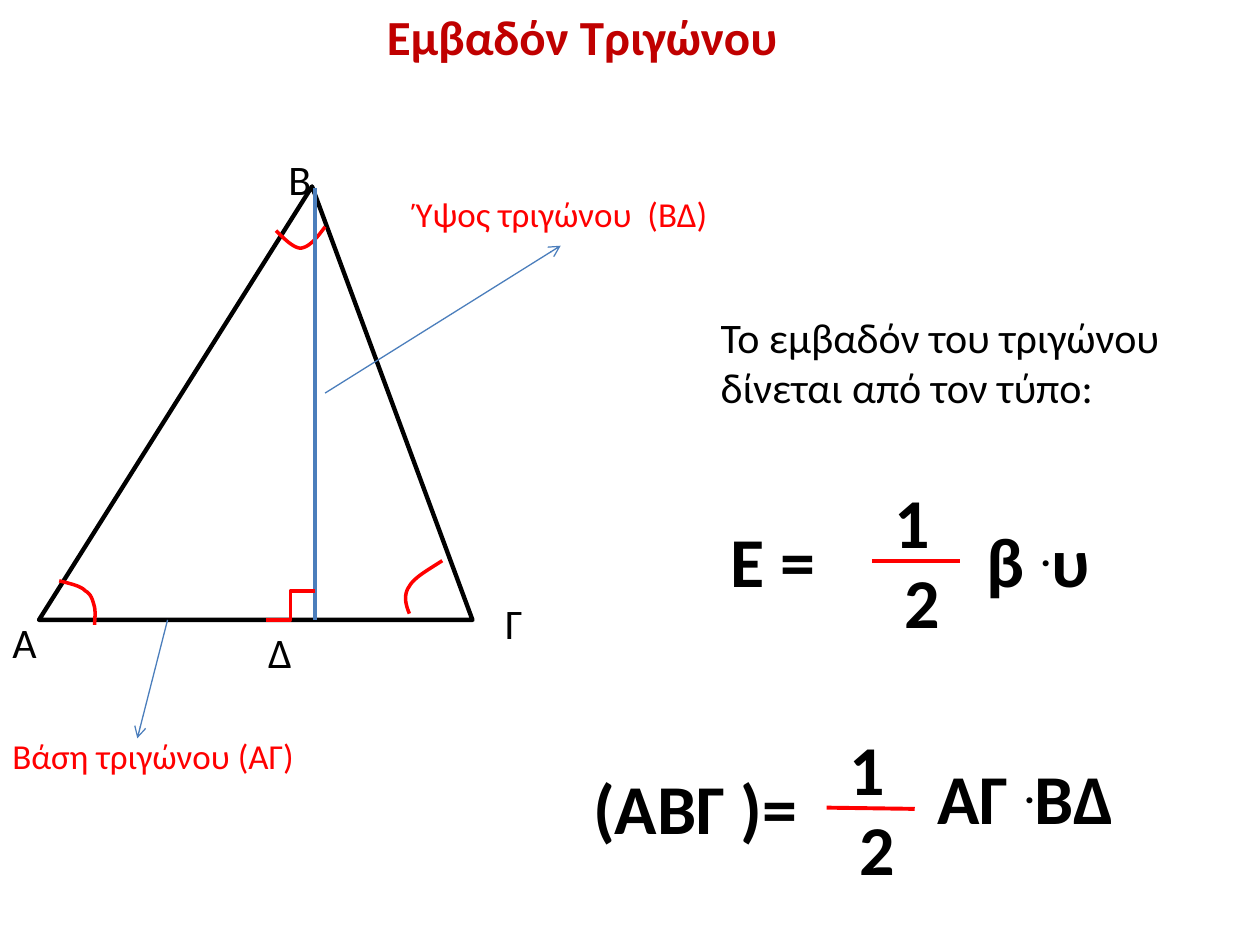
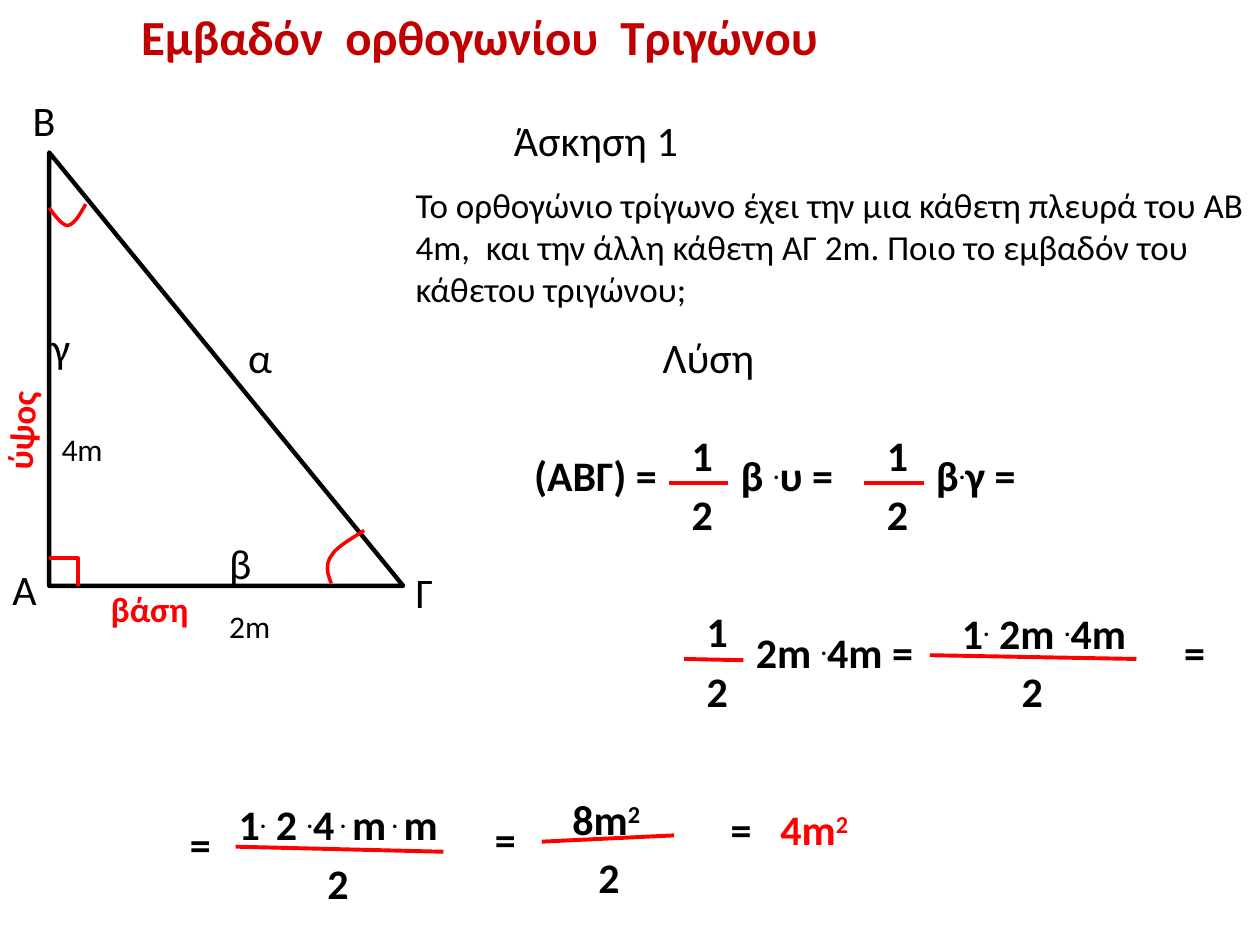
from dataclasses import dataclass
from typing import Any

import lxml.etree
import pptx
import pptx.dml.color
import pptx.enum.shapes
import pptx.enum.text
import pptx.oxml.ns
import pptx.slide
import pptx.util

Inches = pptx.util.Inches
Shapes = pptx.enum.shapes
Point = tuple[float, float]


@dataclass(frozen=True)
class Theme:
    font: str = "Calibri"
    black: str = "000000"
    red: str = "FF0000"
    dark: str = "C00000"
    blue: str = "4B7EBC"
    title: float = 28
    huge: float = 40
    body: float = 24
    note: float = 20
    small: float = 18
    edge: float = 2.5
    bar: float = 2.25
    mark: float = 2
    thin: float = 0.75


THEME = Theme()


@dataclass(frozen=True)
class Label:
    words: str
    left: float
    top: float
    wide: float = 0.55
    size: float = THEME.body
    color: str = THEME.black
    bold: bool = False
    wrap: bool = True
    lines: int = 1
    turn: float = 0


@dataclass(frozen=True)
class Line:
    start: Point
    end: Point
    color: str = THEME.blue
    width: float = THEME.mark
    arrow: bool = False
    bend: float | None = None


@dataclass(frozen=True)
class Arc:
    left: float
    top: float
    wide: float
    high: float
    curve: tuple[Point, ...]


@dataclass(frozen=True)
class Ratio:
    left: float
    top: float
    wide: float = 0.47
    slope: float = 0
    over: str = "1"
    room: float = 0.55
    over_at: Point = (0.08, -0.47)
    under_at: Point = (0.08, 0)
    under_room: float = 0.37
    size: float = THEME.body


TOP = ((0, .18), (.18, .59), (.36, 1), (.51, 1), (.69, .94), (.85, .47), (1, 0))
LEFT = ((0, 0), (.28, .06), (.59, .11), (.72, .23), (.9, .31), (.93, .49),
        (.97, .6), (1, .74), (.97, .89), (.97, 1))
RIGHT = ((.16, 1), (.06, .83), (0, .64), (.16, .48), (.29, .31), (.65, .17), (1, 0))


def apply(thing: Any, values: dict[str, Any]) -> None:
    for name, value in values.items():
        setattr(thing, name, value)


def paint(color: str) -> pptx.dml.color.RGBColor:
    return pptx.dml.color.RGBColor.from_string(color)


def stroke(shape: Any, color: str, width: float) -> None:
    shape.line.color.rgb = paint(color)
    shape.line.width = pptx.util.Pt(width)


def write(shape: Any, label: Label) -> None:
    high = label.lines * label.size * 1.22 / 72 + 0.1
    apply(shape, {"left": Inches(label.left), "top": Inches(label.top),
                  "width": Inches(label.wide), "height": Inches(high),
                  "rotation": label.turn})
    frame = shape.text_frame
    apply(frame, {"word_wrap": label.wrap,
                  "auto_size": pptx.enum.text.MSO_AUTO_SIZE.SHAPE_TO_FIT_TEXT,
                  "vertical_anchor": pptx.enum.text.MSO_ANCHOR.TOP})
    para = frame.paragraphs[0]
    para.alignment = pptx.enum.text.PP_ALIGN.LEFT
    for place, piece in enumerate(label.words.split("|")):
        if not piece:
            continue
        run = para.add_run()
        run.text = piece
        apply(run.font, {"name": THEME.font, "bold": label.bold,
                         "size": pptx.util.Pt(label.size)})
        run.font.color.rgb = paint(label.color)
        if place % 2:
            run.font._element.set("baseline", "30000")


def put_label(slide: pptx.slide.Slide, label: Label) -> None:
    write(slide.shapes.add_textbox(0, 0, 0, 0), label)


def put_line(slide: pptx.slide.Slide, line: Line) -> None:
    kinds = Shapes.MSO_CONNECTOR
    kind = kinds.STRAIGHT if line.bend is None else kinds.ELBOW
    shape = slide.shapes.add_connector(kind, *map(Inches, line.start + line.end))
    stroke(shape, line.color, line.width)
    qn = pptx.oxml.ns.qn
    props = shape._element.spPr
    lxml.etree.SubElement(props, qn("a:effectLst"))
    if line.arrow:
        lxml.etree.SubElement(props.find(qn("a:ln")), qn("a:tailEnd"), type="arrow")
    if line.bend is not None:
        lxml.etree.SubElement(props.find(".//" + qn("a:avLst")), qn("a:gd"),
                              name="adj1", fmla=f"val {round(line.bend * 100000)}")


def trace(curve: tuple[Point, ...], steps: int = 12) -> list[Point]:
    dots = [curve[0]]
    for first in range(0, len(curve) - 1, 3):
        knots = curve[first:first + 4]
        for step in range(1, steps + 1):
            t = step / steps
            parts = ((1 - t) ** 3, 3 * t * (1 - t) ** 2, 3 * t * t * (1 - t), t ** 3)
            dots.append((sum(p * k[0] for p, k in zip(parts, knots)),
                         sum(p * k[1] for p, k in zip(parts, knots))))
    return dots


def put_arc(slide: pptx.slide.Slide, arc: Arc) -> None:
    dots = [(Inches(arc.left + x * arc.wide), Inches(arc.top + y * arc.high))
            for x, y in trace(arc.curve)]
    pen = slide.shapes.build_freeform(*dots[0])
    pen.add_line_segments(dots[1:], close=False)
    shape = pen.convert_to_shape()
    shape.fill.background()
    shape.shadow.inherit = False
    stroke(shape, THEME.red, THEME.mark)


def put_ratio(slide: pptx.slide.Slide, ratio: Ratio) -> None:
    left, top = ratio.left, ratio.top
    put_line(slide, Line((left, top), (left + ratio.wide, top + ratio.slope),
                         THEME.red, THEME.bar))
    for words, (dx, dy), room, wrap in (
            (ratio.over, ratio.over_at, ratio.room, ratio.over == "1"),
            ("2", ratio.under_at, ratio.under_room, False)):
        put_label(slide, Label(words, left + dx, top + dy, room, ratio.size,
                               bold=True, wrap=wrap))


def put_shape(slide: pptx.slide.Slide, left: float, top: float, wide: float,
              high: float, peak: float) -> None:
    shape = slide.shapes.add_shape(Shapes.MSO_SHAPE.ISOSCELES_TRIANGLE,
                                   *map(Inches, (left, top, wide, high)))
    shape.adjustments[0] = peak
    shape.fill.background()
    shape.shadow.inherit = False
    stroke(shape, THEME.black, THEME.edge)


PUT = {Label: put_label, Line: put_line, Arc: put_arc, Ratio: put_ratio}


def fill(slide: pptx.slide.Slide, items: list[Any]) -> None:
    for item in items:
        PUT[type(item)](slide, item)


def start(deck: Any, words: str, left: float, wide: float) -> pptx.slide.Slide:
    slide = deck.slides.add_slide(deck.slide_layouts[5])
    write(slide.shapes.title, Label(words, left, 0, wide, THEME.title,
                                    THEME.dark, True))
    return slide


def term(words: str, left: float, top: float, wide: float = 0.37,
         size: float = THEME.body, color: str = THEME.black) -> Label:
    return Label(words, left, top, wide, size, color, bold=True, wrap=False)


def big(left: float, top: float, slope: float = 0) -> Ratio:
    return Ratio(left, top, 0.7, slope, over_at=(0.08, -0.7),
                 under_at=(0.16, -0.07), under_room=0.49, size=THEME.huge)


def area(deck: Any) -> None:
    slide = start(deck, "Εμβαδόν Τριγώνου", 2.97, 5)
    put_shape(slide, 0.31, 1.48, 3.44, 3.44, 0.63)
    fill(slide, [
        Label("Α", 0, 4.84),
        Label("Β", 2.19, 1.17),
        Label("Γ", 3.91, 4.69),
        Label("Δ", 2.03, 4.92),
        Arc(2.19, 1.8, 0.39, 0.17, TOP),
        Arc(0.47, 4.61, 0.29, 0.35, LEFT),
        Arc(3.2, 4.45, 0.31, 0.42, RIGHT),
        Line((2.5, 1.49), (2.5, 4.92)),
        Line((2.5, 4.69), (2.11, 4.92), THEME.red, bend=0.5),
        Line((2.58, 3.12), (4.45, 1.95), width=THEME.thin, arrow=True),
        Line((1.33, 4.92), (1.09, 5.86), width=THEME.thin, arrow=True),
        Label("Ύψος τριγώνου  (ΒΔ)", 3.2, 1.48, 3.98, THEME.note, THEME.red),
        Label("Βάση τριγώνου (ΑΓ)", 0, 5.78, 3.98, THEME.note, THEME.red),
        Label("Το εμβαδόν του τριγώνου δίνεται από τον τύπο:",
              5.62, 2.42, 4.38, lines=2),
        term("Ε =", 5.7, 4.06, 0.88, THEME.huge),
        big(6.92, 4.45),
        term("β |.|υ", 7.73, 4.06, 1.04, THEME.huge),
        term("(ΑΒΓ )=", 4.61, 6.02, 1.84, THEME.huge),
        big(6.56, 6.41, 0.01),
        term("ΑΓ |.|ΒΔ", 7.34, 5.94, 1.63, THEME.huge),
    ])


def task(deck: Any) -> None:
    slide = start(deck, "Εμβαδόν  ορθογωνίου  Τριγώνου", 1.02, 6.95)
    put_shape(slide, 0.39, 1.21, 2.81, 3.44, 0)
    fill(slide, [
        Label("Α", 0, 4.42),
        Label("Β", 0.16, 0.7),
        Label("Γ", 3.2, 4.45),
        Label("α", 1.87, 2.58, 0.38),
        Label("β", 1.72, 4.22, 0.38),
        Label("γ", 0.31, 2.5, 0.38),
        Arc(0.39, 1.62, 0.29, 0.17, TOP),
        Arc(2.58, 4.21, 0.31, 0.42, RIGHT),
        Line((0.39, 4.43), (0.62, 4.65), THEME.red, bend=1),
        Label("ύψος", -0.48, 2.95, 1.32, THEME.note, THEME.red, True, turn=272.9),
        Label("βάση", 0.78, 4.61, 1.32, THEME.note, THEME.red, True),
        Label("4m", 0.39, 3.36, 0.53, THEME.small, wrap=False),
        Label("2m", 1.72, 4.77, 0.53, THEME.small, wrap=False),
        Label("Άσκηση 1", 3.98, 0.86, 2.58),
        Label("Το ορθογώνιο τρίγωνο έχει την μια κάθετη πλευρά του ΑΒ 4m,  και "
              "την άλλη κάθετη ΑΓ 2m. Ποιο το εμβαδόν του κάθετου τριγώνου;",
              3.2, 1.41, 6.8, THEME.note, lines=3),
        Label("Λύση", 5.16, 2.58, 2.58),
        Label("(ΑΒΓ) =", 4.14, 3.52, 1.25, bold=True),
        Ratio(5.31, 3.83),
        term("β |.|υ =", 5.78, 3.52, 0.95),
        Ratio(6.86, 3.83),
        term("β|.|γ =", 7.33, 3.52, 0.85),
        Ratio(5.43, 5.23, slope=0.01),
        term("2m |.|4m =", 5.9, 4.92, 1.47),
        Ratio(7.38, 5.2, 1.64, 0.03, " 1|.| 2m |.|4m", 1.6,
              (0.08, -0.43), (0.63, 0.03)),
        term("=", 9.3, 4.92),
        term("=", 1.41, 6.45),
        Ratio(1.87, 6.72, 1.65, 0.04, " 1|.| 2 |.|4| . |m| . |m", 1.95,
              (-0.15, -0.43), (0.63, 0.04)),
        term("=", 3.83, 6.41),
        Ratio(4.3, 6.68, 1.05, -0.05, " 8m|2", 0.83,
              (0.07, -0.43), (0.35, 0.03)),
        term("=", 5.7, 6.33),
        term(" 4m|2", 6.02, 6.33, 0.83, color=THEME.red),
    ])


def main() -> None:
    deck = pptx.Presentation()
    apply(deck, {"slide_width": Inches(10), "slide_height": Inches(7.5)})
    area(deck)
    task(deck)
    deck.save("out.pptx")


if __name__ == "__main__":
    main()
